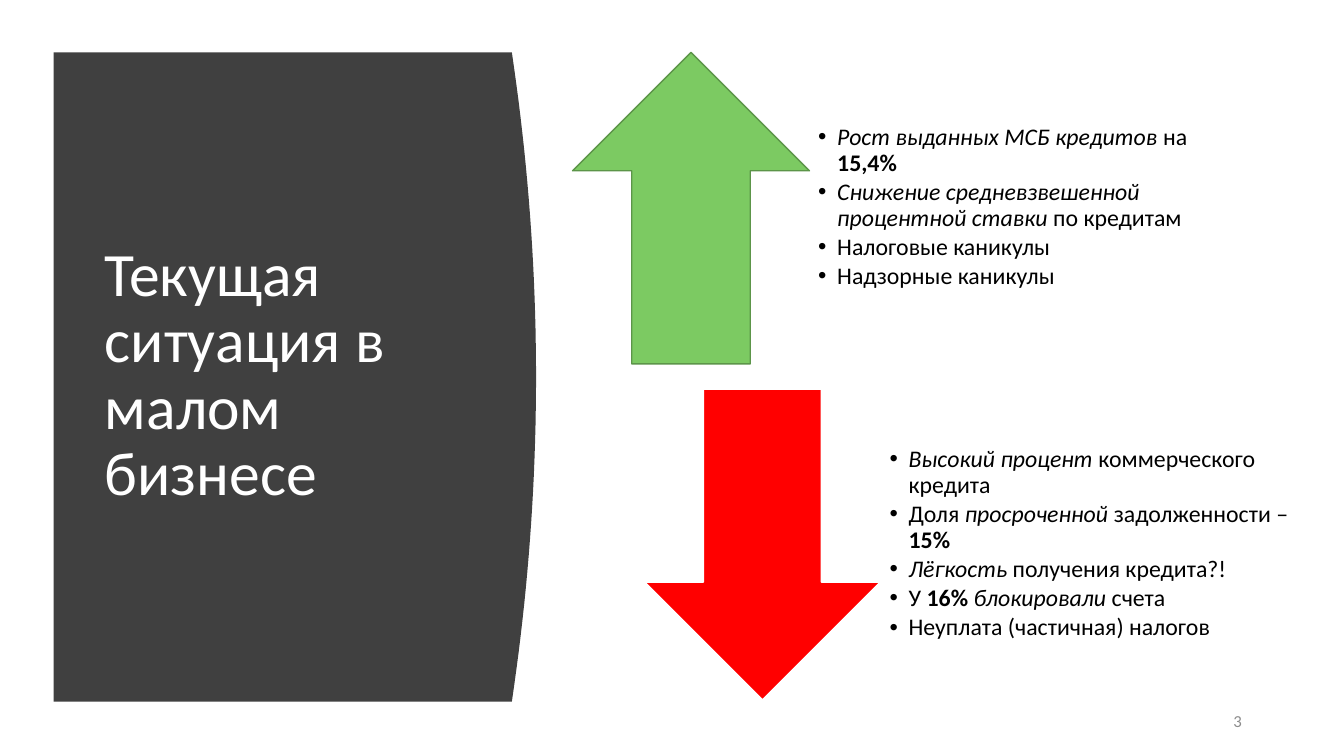
from dataclasses import dataclass

from lxml.etree import SubElement
from pptx import Presentation
from pptx.dml.color import RGBColor
from pptx.enum.shapes import MSO_SHAPE
from pptx.enum.text import MSO_ANCHOR, MSO_AUTO_SIZE, PP_ALIGN
from pptx.oxml.ns import qn
from pptx.util import Cm, Pt


@dataclass(frozen=True)
class Theme:
    font: str = "Calibri"
    panel: RGBColor = RGBColor(0x40, 0x40, 0x40)
    white: RGBColor = RGBColor(0xFF, 0xFF, 0xFF)
    black: RGBColor = RGBColor(0, 0, 0)
    grey: RGBColor = RGBColor(0x8C, 0x8C, 0x8C)
    green: RGBColor = RGBColor(0x7C, 0xCA, 0x62)
    green_edge: RGBColor = RGBColor(0x5C, 0x95, 0x49)
    red: RGBColor = RGBColor(0xFF, 0, 0)
    title_size: Pt = Pt(44)
    body_size: Pt = Pt(17)
    number_size: Pt = Pt(12)


theme = Theme()


def write(paragraph, text, size=theme.body_size, color=theme.black, bold=False, italic=False):
    run = paragraph.add_run()
    run.text = text
    run.font.name = theme.font
    run.font.size = size
    run.font.color.rgb = color
    run.font.bold = bold
    run.font.italic = italic
    return run


prs = Presentation()
prs.slide_width, prs.slide_height = Cm(33.87), Cm(19.05)
slide = prs.slides.add_slide(prs.slide_layouts[5])
shapes = slide.shapes

# Title
title = shapes.title
title.left, title.top, title.width, title.height = Cm(2.39), Cm(2.82), Cm(9.5), Cm(13.31)
title.text_frame.word_wrap = True
title.text_frame.auto_size = MSO_AUTO_SIZE.NONE
title.text_frame.vertical_anchor = MSO_ANCHOR.MIDDLE
heading = title.text_frame.paragraphs[0]
heading.alignment = PP_ALIGN.LEFT
heading.line_spacing = 0.9
write(heading, "Текущая ситуация в малом бизнесе", size=theme.title_size, color=theme.white)

# Dark panel with a parabolic right edge, placed behind the title
left, top, corner, height, bulge, steps = 1.35, 1.32, 12.9, 16.36, 0.61, 40
edge = [
    (Cm(corner + 4 * bulge * t * (1 - t)), Cm(top + height * t))
    for t in (step / steps for step in range(steps + 1))
]
outline = shapes.build_freeform(Cm(left), Cm(top))
outline.add_line_segments(edge + [(Cm(left), Cm(top + height))], close=True)
panel = outline.convert_to_shape()
panel.shadow.inherit = False
panel.fill.solid()
panel.fill.fore_color.rgb = theme.panel
panel.line.fill.background()
title._element.addprevious(panel._element)

# Arrows with their bullet lists; each bullet is a list of (text, format) pieces
BOLD, ITALIC = {"bold": True}, {"italic": True}
growth = [
    [("Рост выданных МСБ кредитов ", ITALIC), ("на ", {}), ("15,4%", BOLD)],
    [("Снижение средневзвешенной процентной ставки", ITALIC), (" по кредитам", {})],
    [("Налоговые каникулы", {})],
    [("Надзорные каникулы", {})],
]
decline = [
    [("Высокий процент ", ITALIC), ("коммерческого кредита", {})],
    [("Доля ", {}), ("просроченной", ITALIC), (" задолженности – ", {}), ("15%", BOLD)],
    [("Лёгкость", ITALIC), (" получения кредита?!", {})],
    [("У ", {}), ("16% ", BOLD), ("блокировали", ITALIC), (" счета", {})],
    [("Неуплата (частичная) налогов", {})],
]
trends = [
    (MSO_SHAPE.UP_ARROW, 14.43, 1.32, theme.green, theme.green_edge, 1, growth),
    (MSO_SHAPE.DOWN_ARROW, 16.23, 9.8, theme.red, theme.white, 1.5, decline),
]
for direction, x, y, fill, edge_color, edge_width, bullets in trends:
    arrow = shapes.add_shape(direction, Cm(x), Cm(y), Cm(5.97), Cm(7.85))
    arrow.shadow.inherit = False
    arrow.fill.solid()
    arrow.fill.fore_color.rgb = fill
    arrow.line.color.rgb = edge_color
    arrow.line.width = Pt(edge_width)

    points = shapes.add_textbox(Cm(x + 6.16), Cm(y), Cm(10.13), Cm(7.85)).text_frame
    points.word_wrap = True
    points.vertical_anchor = MSO_ANCHOR.MIDDLE
    points.margin_left = points.margin_right = points.margin_bottom = Cm(0.03)
    points.margin_top = 0
    for index, pieces in enumerate(bullets):
        point = points.add_paragraph() if index else points.paragraphs[0]
        point.line_spacing = 0.9
        point.space_after = Pt(2.5)
        properties = point._p.get_or_add_pPr()
        properties.set("marL", str(Cm(0.48)))
        properties.set("indent", str(-Cm(0.48)))
        SubElement(properties, qn("a:buFont"), typeface="Arial")
        SubElement(properties, qn("a:buChar"), char="•")
        for text, style in pieces:
            write(point, text, **style)

# Slide number as a live field
number = shapes.add_textbox(Cm(29.8), Cm(17.66), Cm(1.75), Cm(1.01)).text_frame
number.word_wrap = True
number.vertical_anchor = MSO_ANCHOR.MIDDLE
number.paragraphs[0].alignment = PP_ALIGN.RIGHT
number.paragraphs[0].space_after = Pt(6)
write(number.paragraphs[0], "3", size=theme.number_size, color=theme.grey)

prs.save("out.pptx")
